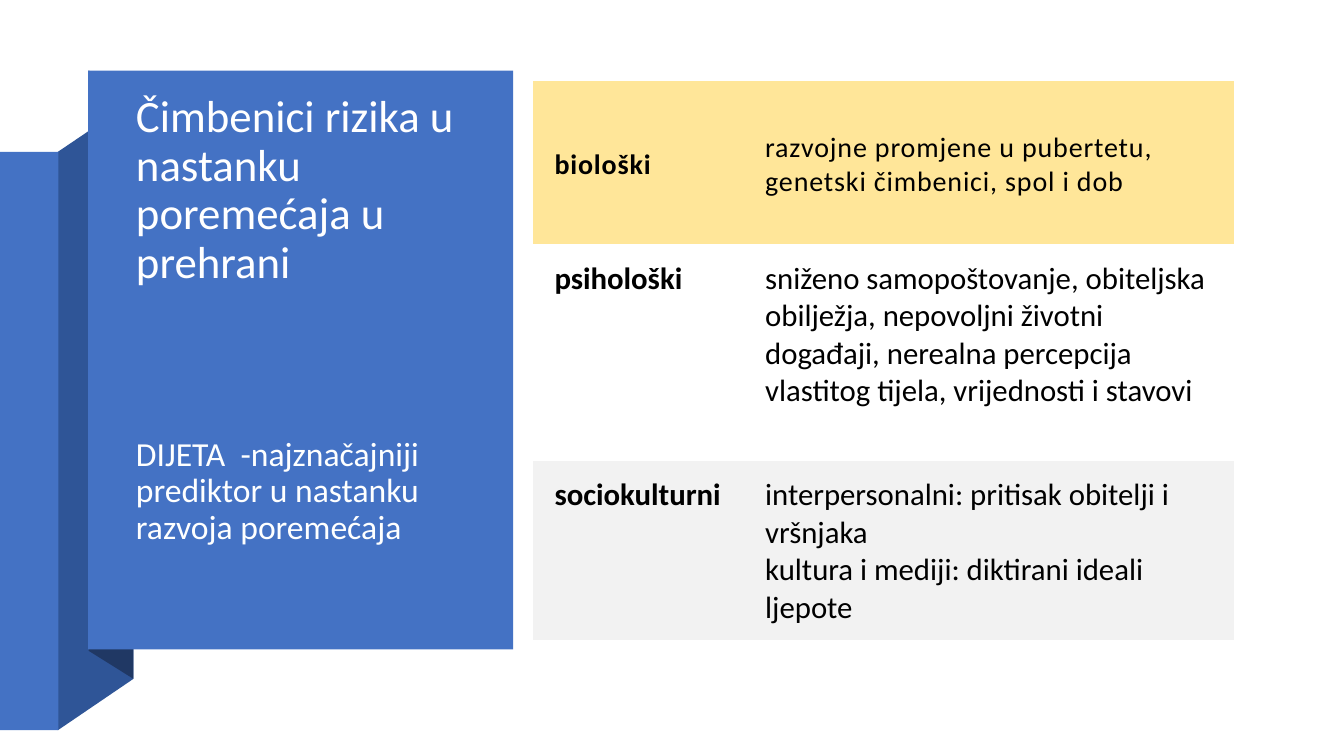
from pptx import Presentation
from pptx import util as u
from pptx.dml.color import RGBColor
from pptx.enum import shapes, text

WIDTH, HEIGHT = u.Inches(13.33), u.Inches(7.5)
FONT = "Calibri"
BLUE, MID_BLUE, DARK_BLUE = "4472C4", "2F5597", "203864"
PLAIN_TABLE = "{2D5ABB26-0587-4C30-8999-92F81FD0307C}"

# Heading, lines of text, row height (% of slide), fill, size, letter spacing, anchor
FACTORS = [
    ("biološki",
     ["razvojne promjene u pubertetu, genetski čimbenici, spol i dob"],
     21.6, "FFE699", 20, 60, text.MSO_ANCHOR.MIDDLE),
    ("psihološki",
     ["sniženo samopoštovanje, obiteljska obilježja, nepovoljni životni "
      "događaji, nerealna percepcija vlastitog tijela, vrijednosti i stavovi"],
     28.67, None, 22, 0, text.MSO_ANCHOR.TOP),
    ("sociokulturni",
     ["interpersonalni: pritisak obitelji i vršnjaka",
      "kultura i mediji: diktirani ideali ljepote"],
     23.73, "F2F2F2", 22, 0, text.MSO_ANCHOR.TOP),
]


def across(percent):
    return u.Emu(round(WIDTH * percent / 100))


def down(percent):
    return u.Emu(round(HEIGHT * percent / 100))


def rgb(code):
    return RGBColor.from_string(code)


def paint(shape, color):
    shape.shadow.inherit = False
    shape.fill.solid()
    shape.fill.fore_color.rgb = rgb(color)
    shape.line.fill.background()


def add_panel(page, left, top, right, bottom, color):
    panel = page.shapes.add_shape(
        shapes.MSO_SHAPE.RECTANGLE, across(left), down(top),
        across(right - left), down(bottom - top))
    paint(panel, color)


def add_fold(page, points, color):
    corners = [(across(x), down(y)) for x, y in points]
    builder = page.shapes.build_freeform(*corners[0])
    builder.add_line_segments(corners[1:], close=True)
    paint(builder.convert_to_shape(), color)


def style_spans(para, size, color, bold=False, spacing=0):
    for span in para.runs:
        span.font.name = FONT
        span.font.size = u.Pt(size)
        span.font.bold = bold
        span.font.color.rgb = rgb(color)
        if spacing:
            span.font._element.set("spc", str(spacing))


def add_text(page, left, top, width, height, words, size, color, anchor):
    box = page.shapes.add_textbox(
        across(left), down(top), across(width), down(height))
    frame = box.text_frame
    frame.word_wrap = True
    frame.vertical_anchor = anchor
    frame.text = words
    para = frame.paragraphs[0]
    para.line_spacing = 0.9
    style_spans(para, size, color)


def fill_cell(cell, lines, fill, size, spacing, anchor, bold):
    cell.margin_left = cell.margin_right = across(1.58)
    cell.margin_top, cell.margin_bottom = down(2.13), down(1.47)
    cell.vertical_anchor = anchor
    if fill:
        cell.fill.solid()
        cell.fill.fore_color.rgb = rgb(fill)
    else:
        cell.fill.background()
    cell.text_frame.text = "\n".join(lines)
    for para in cell.text_frame.paragraphs:
        style_spans(para, size, "000000", bold, spacing)


def add_factor_table(page, left, top, widths):
    height = sum(factor[2] for factor in FACTORS)
    table = page.shapes.add_table(
        len(FACTORS), len(widths), across(left), down(top),
        across(sum(widths)), down(height)).table
    table.first_row = table.horz_banding = False
    table._tbl.tblPr[0].text = PLAIN_TABLE
    for column, width in zip(table.columns, widths):
        column.width = across(width)
    for index, factor in enumerate(FACTORS):
        heading, lines, row_height, fill, size, spacing, anchor = factor
        table.rows[index].height = down(row_height)
        for column, content in enumerate(([heading], lines)):
            fill_cell(table.cell(index, column), content, fill, size,
                      spacing, anchor, bold=column == 0)


def main():
    deck = Presentation()
    deck.slide_width, deck.slide_height = WIDTH, HEIGHT
    page = deck.slides.add_slide(deck.slide_layouts[6])

    add_fold(page, [(4.3, 96.6), (9.93, 89.8), (9.93, 13.33), (4.3, 20.1)],
             MID_BLUE)
    add_panel(page, 0, 20.1, 4.35, 96.6, BLUE)
    add_fold(page, [(6.6, 86.1), (9.93, 89.8), (9.93, 13.2), (6.6, 9.33)],
             DARK_BLUE)
    add_panel(page, 6.55, 9.33, 38.18, 85.9, BLUE)

    add_text(page, 9.38, 14.53, 26.1, 21.47,
             "Čimbenici rizika u nastanku poremećaja u prehrani",
             32, "FFFFFF", text.MSO_ANCHOR.MIDDLE)
    add_text(page, 9.38, 57.2, 26.25, 23.5,
             "DIJETA  -najznačajniji prediktor u nastanku razvoja poremećaja",
             24, "FEFFFF", text.MSO_ANCHOR.TOP)
    add_factor_table(page, 39.68, 10.67, (15.68, 36.46))
    deck.save("out.pptx")


if __name__ == "__main__":
    main()
